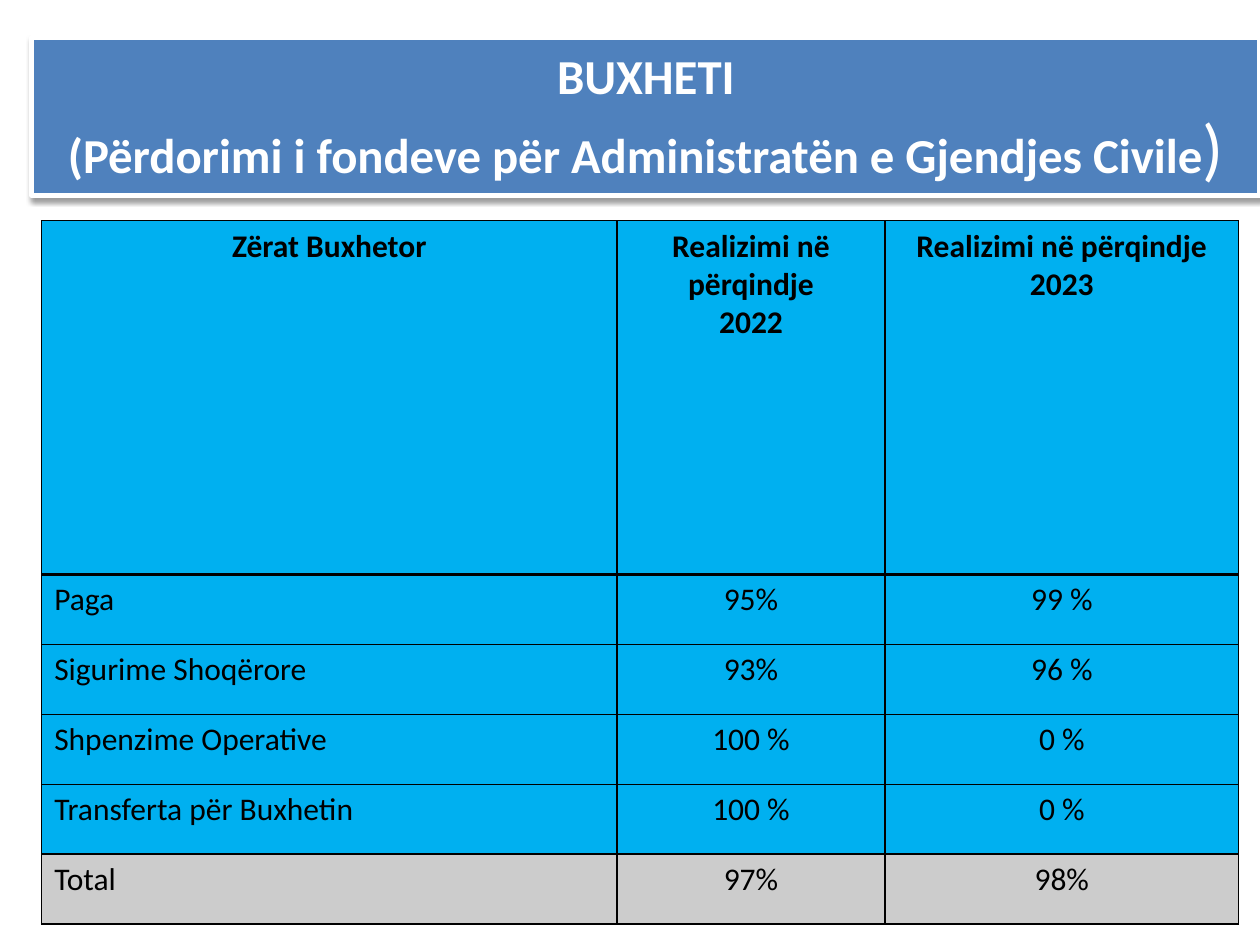
from lxml import etree
from pptx import Presentation
from pptx.dml.color import RGBColor
from pptx.enum import text as t
from pptx.oxml import parse_xml
from pptx.oxml.ns import qn
from pptx.util import Cm, Pt

NS = 'xmlns:a="http://schemas.openxmlformats.org/drawingml/2006/main"'
TITLE = "BUXHETI\v(Përdorimi i fondeve për Administratën e Gjendjes Civile"
HEADS = ["Zërat Buxhetor", "Realizimi në përqindje\n2022", "Realizimi në përqindje\n2023"]
ITEMS = [
    ("Paga", "95%", "99 %"),
    ("Sigurime Shoqërore", "93%", "96 %"),
    ("Shpenzime Operative", "100 %", "0 %"),
    ("Transferta për Buxhetin", "100 %", "0 %"),
    ("Total", "97%", "98%"),
]
WIDTHS = [11.6, 5.4, 7.13]
HEAD_H, ITEM_H = 7.13, 1.41


def paint(fill, color):
    fill.solid()
    fill.fore_color.rgb = RGBColor.from_string(color)


def style(font, size, color, bold):
    font.name, font.size, font.bold = "Calibri", Pt(size), bold
    font.color.rgb = RGBColor.from_string(color)


def add_title(slide):
    title = slide.shapes.title
    title.left, title.top, title.width, title.height = Cm(0.64), Cm(0.76), Cm(24.76), Cm(3.18)
    paint(title.fill, "4F81BD")
    paint(title.line.fill, "FFFFFF")
    title.line.width = Pt(3)
    title._element.spPr.append(parse_xml(
        f'<a:effectLst {NS}><a:outerShdw blurRad="{Pt(3.1)}" dist="{Pt(1.6)}" dir="5400000" '
        'rotWithShape="0"><a:srgbClr val="000000"><a:alpha val="38000"/></a:srgbClr>'
        '</a:outerShdw></a:effectLst>'))
    frame = title.text_frame
    frame.text = TITLE
    frame.word_wrap = True
    frame.auto_size = t.MSO_AUTO_SIZE.NONE
    frame.vertical_anchor = t.MSO_ANCHOR.MIDDLE
    para = frame.paragraphs[0]
    para.alignment = t.PP_ALIGN.CENTER
    style(para.font, 27.9, "FFFFFF", True)
    for run in para.runs:
        style(run.font, 27.9, "FFFFFF", True)
    end = para.add_run()
    end.text = ")"
    style(end.font, 39.6, "FFFFFF", False)


def add_borders(cell, top, bottom):
    props = cell._tc.get_or_add_tcPr()
    for spot, (side, width) in enumerate([("L", 1), ("R", 1), ("T", top), ("B", bottom)]):
        props.insert(spot, parse_xml(
            f'<a:ln{side} {NS} w="{Pt(width)}"><a:solidFill><a:srgbClr val="000000"/>'
            f'</a:solidFill></a:ln{side}>'))


def add_budget(slide):
    rows = [HEADS, *ITEMS]
    heights = [HEAD_H] + [ITEM_H] * len(ITEMS)
    table = slide.shapes.add_table(len(rows), len(WIDTHS), Cm(0.84), Cm(4.45),
                                   Cm(sum(WIDTHS)), Cm(sum(heights))).table
    for col, width in zip(table.columns, WIDTHS):
        col.width = Cm(width)
    for r, (row, height) in enumerate(zip(rows, heights)):
        table.rows[r].height = Cm(height)
        head, total = r == 0, r == len(ITEMS)
        for c, words in enumerate(row):
            cell = table.cell(r, c)
            cell.text = words
            paint(cell.fill, "000000" if total else "00B0F0")
            if total:
                color = cell._tc.tcPr.find(".//" + qn("a:srgbClr"))
                etree.SubElement(color, qn("a:alpha"), val="20000")
            add_borders(cell, 2 if r == 1 else 1, 2 if head else 1)
            for para in cell.text_frame.paragraphs:
                centred = head or c > 0
                para.alignment = t.PP_ALIGN.CENTER if centred else t.PP_ALIGN.LEFT
                style(para.font, 18, "000000", head)


def main():
    deck = Presentation()
    deck.slide_width, deck.slide_height = Cm(25.4), Cm(19.05)
    slide = deck.slides.add_slide(deck.slide_layouts[5])
    add_title(slide)
    add_budget(slide)
    deck.save("out.pptx")


if __name__ == "__main__":
    main()
